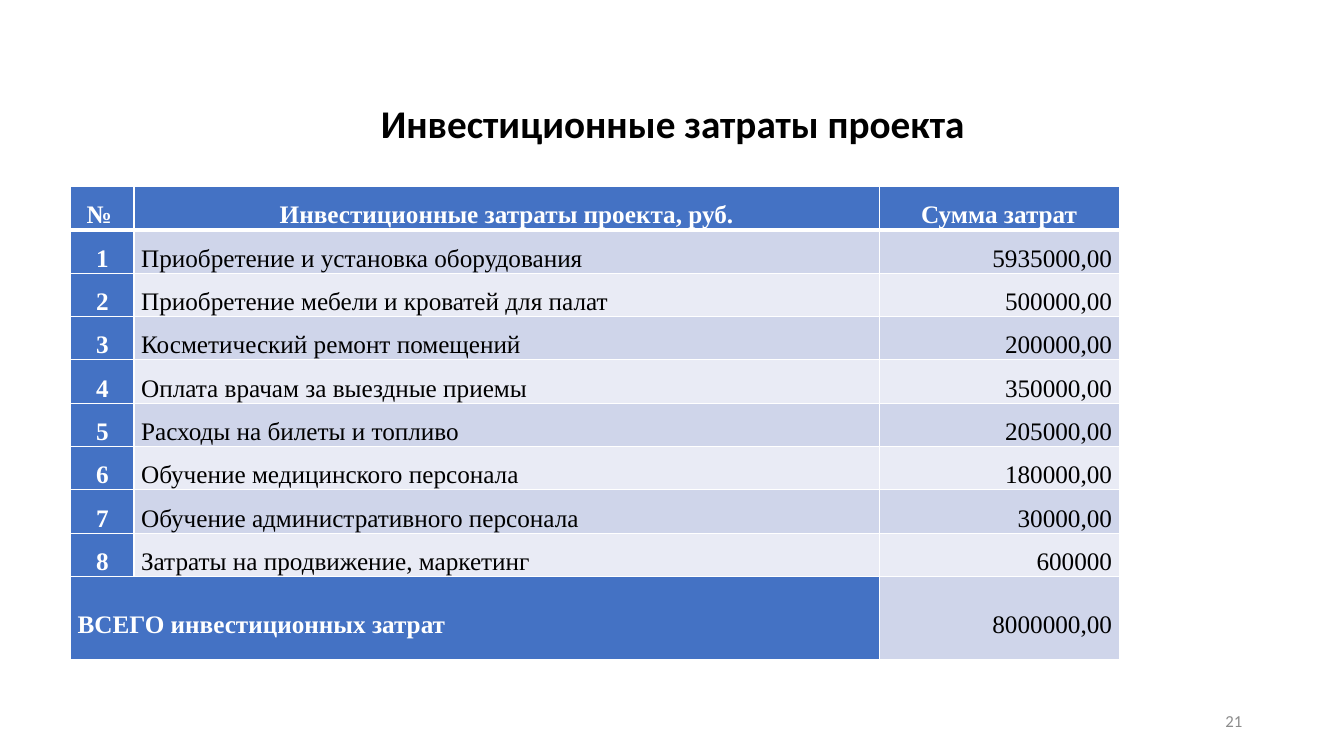
from dataclasses import dataclass

from lxml import etree
from pptx import Presentation
from pptx import util as u
from pptx.dml import color
from pptx.enum import text
from pptx.oxml import ns

WHITE, BLACK, BLUE = "FFFFFF", "000000", "4472C4"
BANDS = ("CFD5EA", "E9EBF5")
LEFT, MID, RIGHT = text.PP_ALIGN.LEFT, text.PP_ALIGN.CENTER, text.PP_ALIGN.RIGHT
WIDTHS = (0.63, 7.39, 2.38)
STEP, LAST = 0.43, 0.82


@dataclass
class Cost:
    name: str
    sum: str


@dataclass
class Style:
    size: float
    font: str
    tint: str
    bold: bool = False


COSTS = [
    Cost("Приобретение и установка оборудования", "5935000,00"),
    Cost("Приобретение мебели и кроватей для палат", "500000,00"),
    Cost("Косметический ремонт помещений", "200000,00"),
    Cost("Оплата врачам за выездные приемы", "350000,00"),
    Cost("Расходы на билеты и топливо", "205000,00"),
    Cost("Обучение медицинского персонала", "180000,00"),
    Cost("Обучение административного персонала", "30000,00"),
    Cost("Затраты на продвижение, маркетинг", "600000"),
]
HEAD = Style(18, "Times New Roman", WHITE, True)
BODY = Style(18, "Times New Roman", BLACK)


def rgb(code: str) -> color.RGBColor:
    return color.RGBColor.from_string(code)


def write(frame, words: str, style: Style, align, space: float) -> None:
    frame.word_wrap = True
    frame.vertical_anchor = text.MSO_ANCHOR.MIDDLE
    para = frame.paragraphs[0]
    para.alignment = align
    para.line_spacing = space
    run = para.add_run()
    run.text = words
    run.font.size = u.Pt(style.size)
    run.font.name = style.font
    run.font.bold = style.bold
    run.font.color.rgb = rgb(style.tint)


def edge(cell, side: str, width: float) -> None:
    props = cell._tc.get_or_add_tcPr()
    line = etree.SubElement(props, ns.qn(f"a:ln{side}"), w=str(u.Pt(width)))
    fill = etree.SubElement(line, ns.qn("a:solidFill"))
    etree.SubElement(fill, ns.qn("a:srgbClr"), val=WHITE)


def paint(cell, row: int, fill: str) -> None:
    cell.margin_left = cell.margin_right = u.Inches(0.07)
    cell.margin_top = cell.margin_bottom = 0
    cell.vertical_anchor = text.MSO_ANCHOR.MIDDLE
    thick = {(0, "B"), (1, "T")}
    for side in "LRTB":
        edge(cell, side, 3 if (row, side) in thick else 1)
    cell.fill.solid()
    cell.fill.fore_color.rgb = rgb(fill)


def put(cell, words: str, style: Style, align) -> None:
    write(cell.text_frame, words, style, align, 1.5)


def add_costs(slide) -> None:
    count = len(COSTS) + 2
    high = STEP * (count - 1) + LAST
    grid = slide.shapes.add_table(
        count, len(WIDTHS), u.Inches(0.7), u.Inches(1.85),
        u.Inches(sum(WIDTHS)), u.Inches(high)).table
    for col, width in zip(grid.columns, WIDTHS):
        col.width = u.Inches(width)
    for row in grid.rows:
        row.height = u.Inches(STEP)
    end = count - 1
    grid.rows[end].height = u.Inches(LAST)

    for row in range(count):
        for col in range(len(WIDTHS)):
            blue = row == 0 or col == 0 or (row == end and col == 1)
            paint(grid.cell(row, col), row, BLUE if blue else BANDS[(row - 1) % 2])

    heads = ("№ ", "Инвестиционные затраты проекта, руб.", "Сумма затрат")
    for col, words in enumerate(heads):
        put(grid.cell(0, col), words, HEAD, MID)
    for row, cost in enumerate(COSTS, 1):
        put(grid.cell(row, 0), str(row), HEAD, MID)
        put(grid.cell(row, 1), cost.name, BODY, LEFT)
        put(grid.cell(row, 2), cost.sum, BODY, RIGHT)
    grid.cell(end, 0).merge(grid.cell(end, 1))
    put(grid.cell(end, 0), "ВСЕГО инвестиционных затрат", HEAD, LEFT)
    put(grid.cell(end, 2), "8000000,00", BODY, RIGHT)


def main() -> None:
    deck = Presentation()
    deck.slide_width, deck.slide_height = u.Inches(13.33), u.Inches(7.5)
    slide = deck.slides.add_slide(deck.slide_layouts[5])

    title = slide.shapes.title
    title.left, title.top = u.Inches(0.92), u.Inches(0.65)
    title.width, title.height = u.Inches(11.5), u.Inches(1.2)
    write(title.text_frame, "Инвестиционные затраты проекта",
          Style(28, "Calibri", BLACK, True), MID, 0.9)

    add_costs(slide)

    page = slide.shapes.add_textbox(
        u.Inches(9.42), u.Inches(6.95), u.Inches(3), u.Inches(0.4))
    write(page.text_frame, "21", Style(12, "Calibri", "8C8C8C"), RIGHT, 1.0)
    deck.save("out.pptx")


if __name__ == "__main__":
    main()
